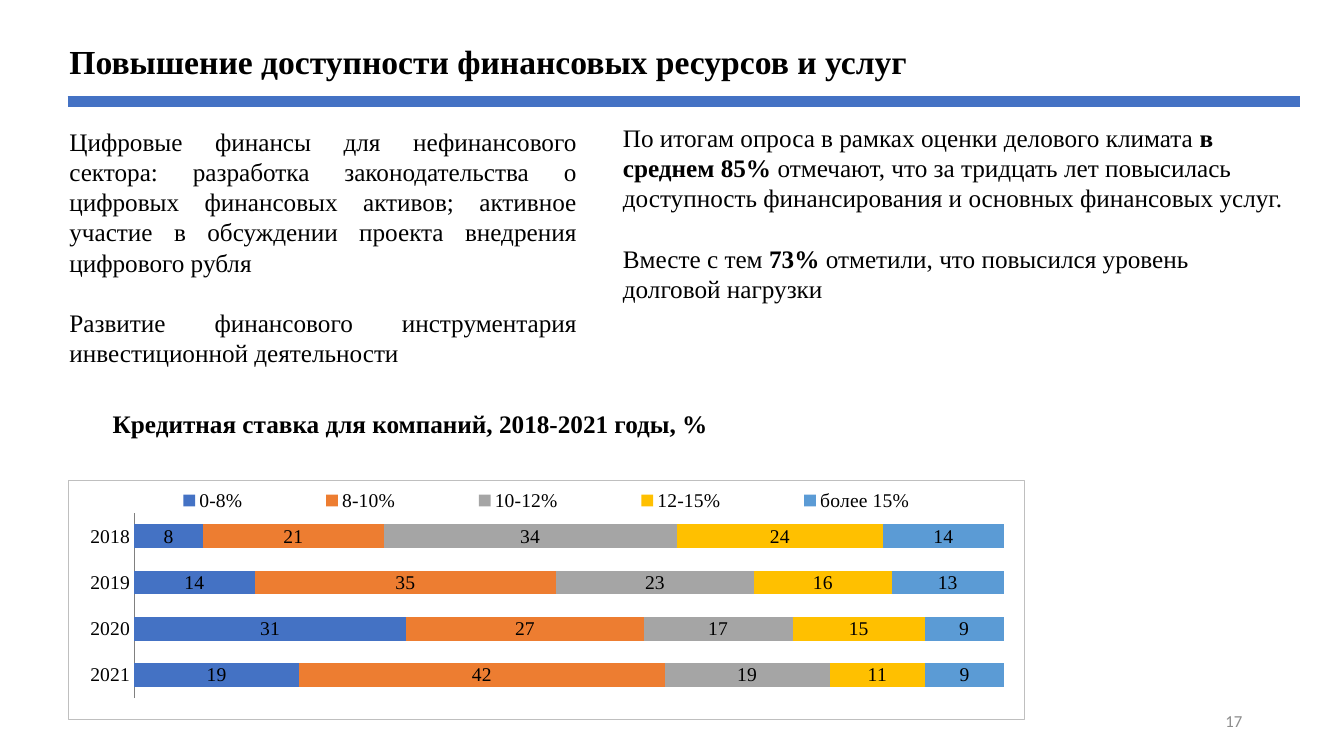
from lxml import etree
from pptx import Presentation
from pptx import util as u
from pptx.chart.data import CategoryChartData
from pptx.dml.color import RGBColor
from pptx.enum import chart as ch, shapes, text
from pptx.oxml import parse_xml
from pptx.oxml.ns import nsdecls, qn

COLORS = {"text": "000000", "rule": "4472C4", "number": "8C8C8C",
          "border": "BFBFBF", "axis": "808080"}
YEARS = ["2021", "2020", "2019", "2018"]
RATES = [
    ("0-8%", [19, 31, 14, 8], "4472C4"),
    ("8-10%", [42, 27, 35, 21], "ED7D31"),
    ("10-12%", [19, 17, 23, 34], "A5A5A5"),
    ("12-15%", [11, 15, 16, 24], "FFC000"),
    ("более 15%", [9, 9, 13, 14], "5B9BD5"),
]


def rgb(value):
    return RGBColor.from_string(value)


def set_layout(element, index, box, inner=False):
    """Place a chart part by fractions of the chart: x, y, width, height."""
    for old in element.findall(qn("c:layout")):
        element.remove(old)
    target = '<c:layoutTarget val="inner"/>' if inner else ""
    modes = "".join(f'<c:{n}Mode val="edge"/>' for n in "xy")
    sizes = "".join(f'<c:{n} val="{v}"/>' for n, v in zip("xywh", box))
    element.insert(index, parse_xml(
        f'<c:layout {nsdecls("c")}><c:manualLayout>{target}{modes}{sizes}'
        '</c:manualLayout></c:layout>'))


class SlideBuilder:
    def __init__(self, slide, font="Times New Roman"):
        self.slide = slide
        self.font = font

    def text(self, box, paragraphs, size=18, bold=None, color="text", font=None,
             align=text.PP_ALIGN.LEFT, anchor=text.MSO_ANCHOR.TOP, gap=0):
        """Add paragraphs, each a list of (wording, bold) runs."""
        sp = self.slide.shapes.add_textbox(*map(u.Inches, box))
        tf = sp.text_frame
        tf.word_wrap = True
        tf.vertical_anchor = anchor
        for i, runs in enumerate(paragraphs):
            p = tf.add_paragraph() if i else tf.paragraphs[0]
            p.alignment = align
            if i:
                p.space_before = u.Pt(gap)
            p.font.name = font or self.font
            p.font.size = u.Pt(size)
            p.font.bold = bold
            p.font.color.rgb = rgb(COLORS[color])
            for wording, strong in runs:
                r = p.add_run()
                r.text = wording
                if strong:
                    r.font.bold = True

    def rule(self, left, right, y, width):
        line = self.slide.shapes.add_connector(
            shapes.MSO_CONNECTOR.STRAIGHT,
            u.Inches(left), u.Inches(y), u.Inches(right), u.Inches(y))
        line.line.color.rgb = rgb(COLORS["rule"])
        line.line.width = u.Pt(width)
        etree.SubElement(line._element.spPr, qn("a:effectLst"))

    def stacked_chart(self, box, categories, series):
        data = CategoryChartData(number_format="#,##0")
        data.categories = categories
        for name, values, _ in series:
            data.add_series(name, values)
        chart = self.slide.shapes.add_chart(
            ch.XL_CHART_TYPE.BAR_STACKED_100, *map(u.Inches, box), data).chart
        chart.has_title = False
        chart.font.name = self.font
        chart.font.size = u.Pt(14)
        chart.font.color.rgb = rgb(COLORS["text"])

        plot = chart.plots[0]
        plot.gap_width = 95
        plot.overlap = 100
        plot.vary_by_categories = False
        for s, (_, _, color) in zip(plot.series, series):
            s.format.fill.solid()
            s.format.fill.fore_color.rgb = rgb(color)
            s.data_labels.show_value = True
            s.data_labels.number_format = "#,##0"
            s.data_labels.number_format_is_linked = False

        axis = chart.category_axis
        axis.major_tick_mark = ch.XL_TICK_MARK.NONE
        axis.format.line.color.rgb = rgb(COLORS["axis"])
        chart.value_axis.visible = False
        chart.value_axis.has_major_gridlines = False
        chart.value_axis.major_unit = 0.2

        chart.has_legend = True
        chart.legend.position = ch.XL_LEGEND_POSITION.TOP
        chart.legend.include_in_layout = False
        set_layout(chart.legend._element, 1, (0.04, 0.03, 0.92, 0.11))
        space = chart._chartSpace
        set_layout(space.chart.plotArea, 0, (0.069, 0.138, 0.909, 0.774), inner=True)
        space.find(qn("c:txPr")).addprevious(parse_xml(
            f'<c:spPr {nsdecls("c", "a")}><a:noFill/><a:ln w="{u.Pt(0.75)}"><a:solidFill>'
            f'<a:srgbClr val="{COLORS["border"]}"/></a:solidFill></a:ln></c:spPr>'))


def main():
    prs = Presentation()
    prs.slide_width, prs.slide_height = u.Inches(13.33), u.Inches(7.5)
    page = SlideBuilder(prs.slides.add_slide(prs.slide_layouts[6]))

    page.text((9.42, 6.95, 3, 0.4), [[("17", False)]], size=12, color="number",
              font="Calibri", align=text.PP_ALIGN.RIGHT, anchor=text.MSO_ANCHOR.MIDDLE)
    page.text((0.59, 1.2, 5.23, 2.52), [
        [("Цифровые финансы для нефинансового сектора: разработка законодательства "
          "о цифровых финансовых активов; активное участие в обсуждении проекта "
          "внедрения цифрового рубля", False)],
        [("Развитие финансового инструментария инвестиционной деятельности", False)],
    ], align=text.PP_ALIGN.JUSTIFY, gap=21.6)
    page.text((6.08, 1.16, 6.8, 1.92), [
        [("По итогам опроса в рамках оценки делового климата ", False),
         ("в среднем 85%", True),
         (" отмечают, что за тридцать лет повысилась доступность финансирования "
          "и основных финансовых услуг.", False)],
        [("Вместе с тем ", False), ("73%", True),
         (" отметили, что повысился уровень долговой нагрузки", False)],
    ], gap=21.6)
    page.text((0.59, 0.36, 12.29, 0.5),
              [[("Повышение доступности финансовых ресурсов и услуг", False)]],
              size=24, bold=True)
    page.rule(0.67, 12.89, 1.01, 8)
    page.stacked_chart((0.67, 4.76, 9.5, 2.38), YEARS, RATES)
    page.text((1.02, 4, 7.23, 0.4),
              [[("Кредитная ставка для компаний, 2018-2021 годы, %", False)]], bold=True)
    prs.save("out.pptx")


if __name__ == "__main__":
    main()
